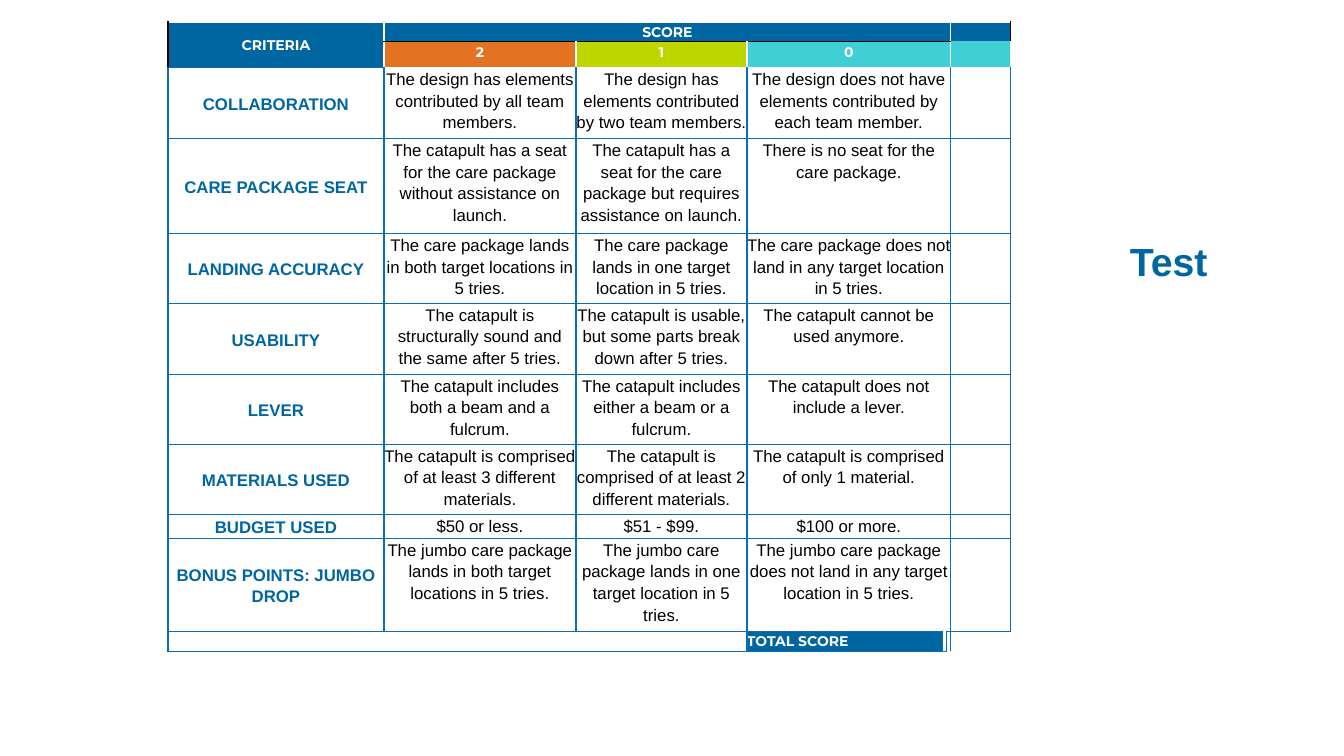
from lxml.etree import SubElement
from pptx import Presentation
from pptx.dml.color import RGBColor
from pptx.enum.text import MSO_ANCHOR, PP_ALIGN
from pptx.oxml.ns import qn
from pptx.util import Emu, Pt

EMU_PER_PX = 914400 / 100.8
BLUE, GRID, WHITE, BLACK = "0066A1", "0D6CB9", "FFFFFF", "000000"
ORANGE, LIME, TEAL = "E37222", "BED600", "3FCFD5"

COLUMN_WIDTHS = [216, 192, 171, 196, 4, 4, 60]
ROW_HEIGHTS = [19, 26, 71, 95, 70, 71, 70, 70, 24, 93, 20]
LAST_COLUMN = len(COLUMN_WIDTHS) - 1
FIRST_CRITERION_ROW = 2
TOTAL_ROW = len(ROW_HEIGHTS) - 1

CRITERIA = [
    ("COLLABORATION",
     "The design has elements contributed by all team members.",
     "The design has elements contributed by two team members.",
     "The design does not have elements contributed by each team member."),
    ("CARE PACKAGE SEAT",
     "The catapult has a seat for the care package without assistance on launch.",
     "The catapult has a seat for the care package but requires assistance on launch.",
     "There is no seat for the care package."),
    ("LANDING ACCURACY",
     "The care package lands in both target locations in 5 tries.",
     "The care package lands in one target location in 5 tries.",
     "The care package does not land in any target location in 5 tries."),
    ("USABILITY",
     "The catapult is structurally sound and the same after 5 tries.",
     "The catapult is usable, but some parts break down after 5 tries.",
     "The catapult cannot be used anymore."),
    ("LEVER",
     "The catapult includes both a beam and a fulcrum.",
     "The catapult includes either a beam or a fulcrum.",
     "The catapult does not include a lever."),
    ("MATERIALS USED",
     "The catapult is comprised of at least 3 different materials.",
     "The catapult is comprised of at least 2 different materials.",
     "The catapult is comprised of only 1 material."),
    ("BUDGET USED", "$50 or less.", "$51 - $99.", "$100 or more."),
    ("BONUS POINTS: JUMBO DROP",
     "The jumbo care package lands in both target locations in 5 tries.",
     "The jumbo care package lands in one target location in 5 tries.",
     "The jumbo care package does not land in any target location in 5 tries."),
]


def px(length):
    return Emu(round(length * EMU_PER_PX))


def color(hex_value):
    return RGBColor.from_string(hex_value)


def set_font(font, size, name, hex_value, bold):
    font.size, font.name, font.bold = Pt(size), name, bold
    font.color.rgb = color(hex_value)


def set_edges(cell, edges):
    """Draw the cell's edges, a dict of L, R, T, B to colours; other edges stay empty."""
    properties = cell._tc.get_or_add_tcPr()
    for side in "LRTB":
        line = SubElement(properties, qn(f"a:ln{side}"), w=str(Pt(1)))
        if side in edges:
            fill = SubElement(line, qn("a:solidFill"))
            SubElement(fill, qn("a:srgbClr"), val=edges[side])
        else:
            SubElement(line, qn("a:noFill"))


def edge_colors(left=GRID, right=GRID, top=GRID, bottom=GRID):
    sides = {"L": left, "R": right, "T": top, "B": bottom}
    return {side: hex_value for side, hex_value in sides.items() if hex_value}


def style_cell(cell, edges, fill):
    cell.margin_left = cell.margin_right = cell.margin_top = cell.margin_bottom = 0
    set_edges(cell, edges)
    if fill:
        cell.fill.solid()
        cell.fill.fore_color.rgb = color(fill)
    else:
        cell.fill.background()


def add_cell(table, row, column, edges, fill=None, rows=1, columns=1):
    """Style a cell, with those merged into it, and return it."""
    for r in range(row, row + rows):
        for c in range(column, column + columns):
            style_cell(table.cell(r, c), edges, fill)
    cell = table.cell(row, column)
    if rows * columns > 1:
        cell.merge(table.cell(row + rows - 1, column + columns - 1))
    return cell


def write(cell, text, size, name, hex_value, bold, centered=True, middle=True):
    cell.text = text
    cell.vertical_anchor = MSO_ANCHOR.MIDDLE if middle else MSO_ANCHOR.TOP
    paragraph = cell.text_frame.paragraphs[0]
    paragraph.alignment = PP_ALIGN.CENTER if centered else PP_ALIGN.LEFT
    if centered:
        paragraph.line_spacing = 1.15
    set_font(paragraph.font, size, name, hex_value, bold)


def write_header(cell, text, **layout):
    write(cell, text, 10, "Montserrat", WHITE, True, **layout)


def shrink_empty_cells(table):
    """Keep blank cells from stretching their rows."""
    for cell in table.iter_cells():
        if not cell.text:
            SubElement(cell.text_frame.paragraphs[0]._p, qn("a:endParaRPr"), sz="800")


def add_headers(table):
    criteria = add_cell(table, 0, 0, edge_colors(BLACK, WHITE, WHITE), BLUE, rows=2)
    write_header(criteria, "CRITERIA")
    score = add_cell(table, 0, 1, edge_colors(WHITE, WHITE, WHITE, BLACK), BLUE, columns=5)
    write_header(score, "SCORE")
    add_cell(table, 0, LAST_COLUMN, edge_colors(WHITE, BLACK, WHITE, None), BLUE)

    points = [("2", ORANGE, BLACK, 1), ("1", LIME, BLACK, 1), ("0", TEAL, BLACK, 3)]
    for column, (label, fill, top, span) in enumerate(points, 1):
        cell = add_cell(table, 1, column, edge_colors(WHITE, WHITE, top, WHITE), fill, columns=span)
        write_header(cell, label, middle=False)
    add_cell(table, 1, LAST_COLUMN, edge_colors(WHITE, WHITE, None, WHITE), TEAL)


def add_criteria(table):
    for row, (criterion, *levels) in enumerate(CRITERIA, FIRST_CRITERION_ROW):
        top = WHITE if row == FIRST_CRITERION_ROW else GRID
        name = add_cell(table, row, 0, edge_colors())
        write(name, criterion, 12, "Arial", BLUE, True)
        for column, level in enumerate(levels, 1):
            span = 3 if column == 3 else 1
            cell = add_cell(table, row, column, edge_colors(top=top), columns=span)
            write(cell, level, 12, "Arial", BLACK, False, middle=False)
        add_cell(table, row, LAST_COLUMN, edge_colors(top=top))


def add_total(table):
    add_cell(table, TOTAL_ROW, 0, edge_colors(), columns=3)
    total = add_cell(table, TOTAL_ROW, 3, edge_colors(), BLUE)
    write_header(total, "TOTAL SCORE", centered=False)
    add_cell(table, TOTAL_ROW, 4, edge_colors(top=None))
    add_cell(table, TOTAL_ROW, 5, edge_colors(bottom=None))
    add_cell(table, TOTAL_ROW, LAST_COLUMN, edge_colors(right=None, bottom=None))


def add_rubric(slide):
    table = slide.shapes.add_table(
        len(ROW_HEIGHTS), len(COLUMN_WIDTHS), px(168), px(22),
        px(sum(COLUMN_WIDTHS)), px(sum(ROW_HEIGHTS))).table
    table.first_row = table.horz_banding = False
    for column, width in zip(table.columns, COLUMN_WIDTHS):
        column.width = px(width)
    for row, height in zip(table.rows, ROW_HEIGHTS):
        row.height = px(height)
    add_headers(table)
    add_criteria(table)
    add_total(table)
    shrink_empty_cells(table)


def add_title(slide, text):
    frame = slide.shapes.add_textbox(px(1120), px(232), px(145), px(57)).text_frame
    frame.word_wrap = True
    frame.text = text
    set_font(frame.paragraphs[0].font, 28, "Arial", BLUE, True)


def main():
    presentation = Presentation()
    presentation.slide_width, presentation.slide_height = px(1344), px(756)
    slide = presentation.slides.add_slide(presentation.slide_layouts[6])
    add_title(slide, "Test")
    add_rubric(slide)
    presentation.save("out.pptx")


if __name__ == "__main__":
    main()
